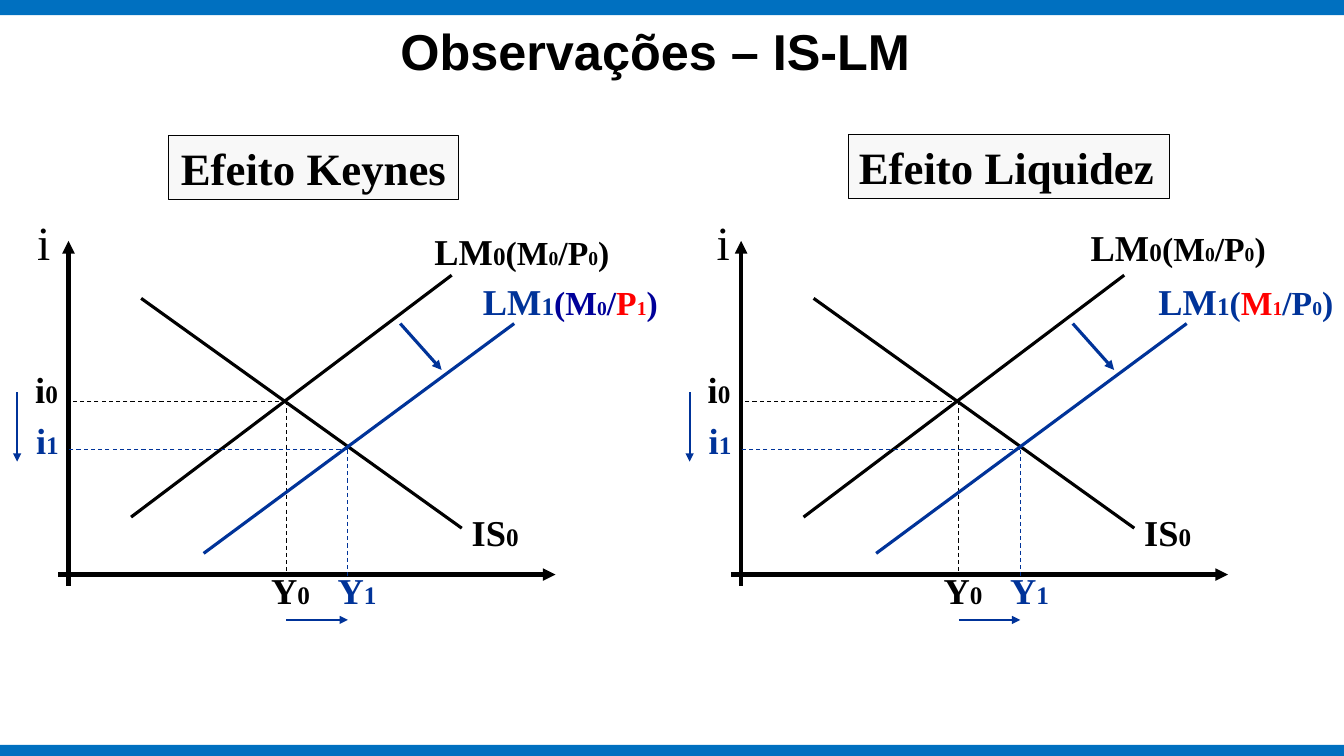
from pptx import Presentation
from pptx.dml.color import RGBColor
from pptx.enum import dml, shapes, text
from pptx.oxml.ns import qn
from pptx.util import Inches, Pt
from lxml import etree

BLACK, BLUE, NAVY, RED = "000000", "003399", "000099", "FF0000"
SERIF = "Times New Roman"
BIG, MID, INDEX, SMALL = 26, 24, 18, 14


def rgb(color):
    return RGBColor.from_string(color)


def add_run(p, words, size, color, bold=True, font=SERIF):
    r = p.add_run()
    r.text = words
    r.font.name, r.font.size, r.font.bold = font, Pt(size), bold
    r.font.color.rgb = rgb(color)


def add_label(parent, x, y, w, h, runs, bold=True):
    """Place a left-aligned label; runs are (words, size, color)."""
    tf = parent.add_textbox(Inches(x), Inches(y), Inches(w), Inches(h)).text_frame
    tf.word_wrap = True
    for words, size, color in runs:
        add_run(tf.paragraphs[0], words, size, color, bold)


def add_symbol(parent, x, y, w, name, index, color):
    add_label(parent, x, y, w, 0.66, [(name, BIG, color), (index, INDEX, color)])


def add_line(parent, x1, y1, x2, y2, color, width, dash=False, arrow=False):
    s = parent.add_connector(shapes.MSO_CONNECTOR.STRAIGHT,
                             Inches(x1), Inches(y1), Inches(x2), Inches(y2))
    s.line.color.rgb, s.line.width = rgb(color), Pt(width)
    if dash:
        s.line.dash_style = dml.MSO_LINE.DASH
    if arrow:
        etree.SubElement(s.line._get_or_add_ln(), qn("a:tailEnd"), type="triangle")
    etree.SubElement(s._element.spPr, qn("a:effectLst"))


def add_box(slide, x, y, w, h, fill, border=None):
    s = slide.shapes.add_shape(shapes.MSO_SHAPE.RECTANGLE,
                               Inches(x), Inches(y), Inches(w), Inches(h))
    s.shadow.inherit = False
    s.fill.solid()
    s.fill.fore_color.rgb = rgb(fill)
    if border:
        s.line.color.rgb, s.line.width = rgb(border), Pt(0.75)
    else:
        s.line.fill.background()
    return s


def add_frame(slide):
    """Draw the top and bottom bars and the title."""
    add_box(slide, 0, 0, 13.33, 0.15, "0070C0")
    add_box(slide, 0, 7.39, 13.33, 0.11, "0070C0")
    tf = slide.shapes.add_textbox(Inches(0.75), Inches(0.15),
                                  Inches(11.5), Inches(0.7)).text_frame
    tf.word_wrap = True
    tf.vertical_anchor = text.MSO_ANCHOR.BOTTOM
    p = tf.paragraphs[0]
    p.alignment = text.PP_ALIGN.CENTER
    add_run(p, "Observações – IS-LM", 36, BLACK, font="Arial")


def add_heading(slide, x, y, w, words, align):
    s = add_box(slide, x, y, w, 0.64, "F8F8F8", BLACK)
    s.text_frame.word_wrap = True
    p = s.text_frame.paragraphs[0]
    p.alignment = align
    add_run(p, words, 32, BLACK)


def add_guides(parent, left, x, y, bottom, color):
    """Drop dashed lines from an equilibrium to both axes."""
    add_line(parent, x, y, x, bottom, color, 0.75, dash=True)
    add_line(parent, x, y, left, y, color, 0.75, dash=True)


def add_initial_curves(parent, x, i_x, lm_x, lm_y):
    axis = x + 0.68
    add_line(parent, axis, 5.81, axis, 2.39, BLACK, 3, arrow=True)
    add_line(parent, x + 0.58, 5.7, x + 5.51, 5.7, BLACK, 3, arrow=True)
    add_line(parent, x + 1.4, 2.96, x + 4.58, 5.24, BLACK, 2.25)
    add_line(parent, x + 1.3, 5.13, x + 4.48, 2.73, BLACK, 2.25)
    add_guides(parent, axis, x + 2.84, 3.98, 5.7, BLACK)
    sizes = (BIG, INDEX, MID, SMALL, MID, SMALL, MID)
    words = ("LM", "0", "(M", "0", "/P", "0", ")")
    add_label(parent, x + lm_x, lm_y, 2.1, 0.54,
              [(word, size, BLACK) for word, size in zip(words, sizes)])
    add_label(parent, x + i_x, 2.06, 0.41, 0.67, [("i", 34, BLACK)], bold=False)
    add_symbol(parent, x + 4.58, 5.01, 1.34, "IS", "0", BLACK)
    add_symbol(parent, x + 2.59, 5.59, 0.92, "Y", "0", BLACK)
    add_symbol(parent, x + 0.25, 3.59, 0.69, "i", "0", BLACK)


def add_shifted_curve(parent, x, lm_x, lm_runs):
    add_label(parent, x + lm_x, 2.72, 1.96, 0.54,
              [("LM", BIG, BLUE), ("1", INDEX, BLUE)] + lm_runs)
    add_line(parent, x + 2.02, 5.49, x + 5.1, 3.21, BLUE, 2.25)
    add_symbol(parent, x + 3.25, 5.59, 0.92, "Y", "1", BLUE)
    add_symbol(parent, x + 0.26, 4.1, 0.58, "i", "1", BLUE)
    add_line(parent, x + 3.97, 3.21, x + 4.38, 3.67, BLUE, 2.25, arrow=True)
    add_line(parent, x + 0.17, 3.89, x + 0.17, 4.58, BLUE, 1.5, arrow=True)
    add_line(parent, x + 2.84, 6.15, x + 3.45, 6.15, BLUE, 1.5, arrow=True)
    add_guides(parent, x + 0.68, x + 3.45, 4.46, 5.72, BLUE)


def main():
    prs = Presentation()
    prs.slide_width, prs.slide_height = Inches(13.33), Inches(7.5)
    slide = prs.slides.add_slide(prs.slide_layouts[6])
    add_frame(slide)

    keynes, liquidity = 0, 6.67
    add_initial_curves(slide.shapes, keynes, 0.27, 4.21, 2.22)
    add_shifted_curve(slide.shapes.add_group_shape().shapes, keynes, 4.69, [
        ("(M", MID, NAVY), ("0", SMALL, NAVY), ("/", MID, NAVY),
        ("P", MID, RED), ("1", SMALL, RED), (")", MID, NAVY)])
    add_initial_curves(slide.shapes, liquidity, 0.34, 4.05, 2.18)
    add_shifted_curve(slide.shapes.add_group_shape().shapes, liquidity, 4.72, [
        ("(", MID, BLUE), ("M", MID, RED), ("1", SMALL, RED),
        ("/P", MID, BLUE), ("0", SMALL, BLUE), (")", MID, BLUE)])

    add_heading(slide, 1.67, 1.34, 2.88, "Efeito Keynes", text.PP_ALIGN.CENTER)
    add_heading(slide, 8.42, 1.33, 3.18, "Efeito Liquidez", text.PP_ALIGN.LEFT)
    prs.save("out.pptx")


if __name__ == "__main__":
    main()
